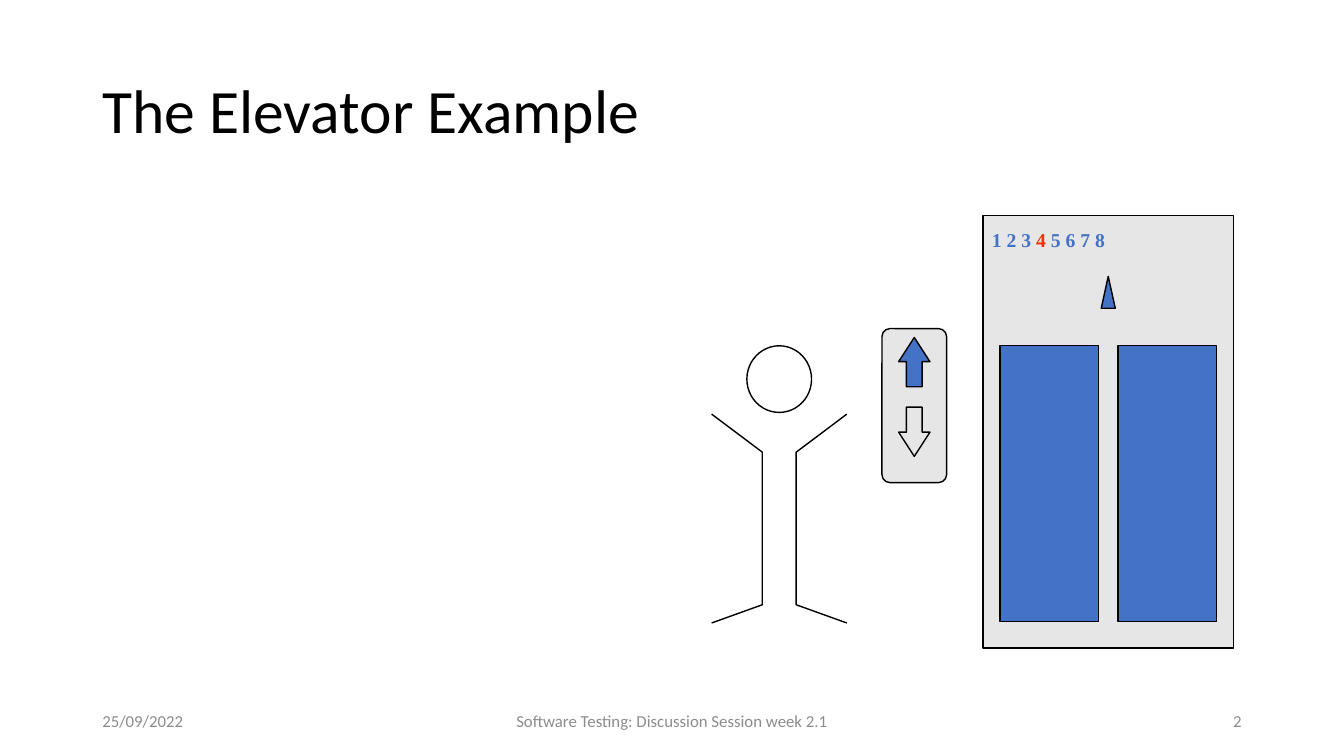
from pptx import Presentation
from pptx.dml.color import RGBColor
from pptx.enum.shapes import MSO_SHAPE
from pptx.enum.text import MSO_ANCHOR, MSO_AUTO_SIZE, PP_ALIGN
from pptx.util import Pt

RECTANGLE = MSO_SHAPE.RECTANGLE
ROUNDED = MSO_SHAPE.ROUNDED_RECTANGLE
OVAL = MSO_SHAPE.OVAL
TRIANGLE = MSO_SHAPE.ISOSCELES_TRIANGLE
UP_ARROW, DOWN_ARROW = MSO_SHAPE.UP_ARROW, MSO_SHAPE.DOWN_ARROW
TOP, MIDDLE = MSO_ANCHOR.TOP, MSO_ANCHOR.MIDDLE
LEFT, CENTER, RIGHT = PP_ALIGN.LEFT, PP_ALIGN.CENTER, PP_ALIGN.RIGHT
NO_AUTOFIT = MSO_AUTO_SIZE.NONE

TITLE_ONLY = 5
BLACK, GREY, PANEL, BLUE, RED = "000000", "8C8C8C", "E7E6E6", "4472C4", "F23002"
TITLE_FORMAT = {"name": "Calibri", "size": Pt(44), "bold": False}
FOOTER_FORMAT = {"name": "Calibri", "size": Pt(12), "bold": False}
FLOOR_FORMAT = {"name": "Times New Roman", "size": Pt(14), "bold": True}


def colour(value):
    return RGBColor.from_string(value)


def write(shape, spans, text_format, align=LEFT, anchor=MIDDLE):
    frame = shape.text_frame
    frame.word_wrap = True
    frame.auto_size = NO_AUTOFIT
    frame.vertical_anchor = anchor
    para = frame.paragraphs[0]
    para.alignment = align
    for text, ink in spans:
        span = para.add_run()
        span.text = text
        span.font.color.rgb = colour(ink)
        for name, value in text_format.items():
            setattr(span.font, name, value)
    return para


def add_text(page, box, *details):
    write(page.shapes.add_textbox(*map(Pt, box)), *details)


def outline(shape, fill=None):
    shape.shadow.inherit = False
    if fill:
        shape.fill.solid()
        shape.fill.fore_color.rgb = colour(fill)
    else:
        shape.fill.background()
    shape.line.color.rgb = colour(BLACK)
    shape.line.width = Pt(1)


def add_outlined(page, kind, box, fill=None, adjustments=()):
    shape = page.shapes.add_shape(kind, *map(Pt, box))
    outline(shape, fill)
    for index, value in enumerate(adjustments):
        shape.adjustments[index] = value


def add_title(page, box):
    title = page.shapes.title
    title.left, title.top, title.width, title.height = map(Pt, box)
    para = write(title, [("The Elevator Example", BLACK)], TITLE_FORMAT)
    para.line_spacing = 0.9


def add_footer(page, box):
    left, top, width, height = box
    side, middle = 216, 324
    parts = [
        (left, side, "25/09/2022", LEFT),
        (left + (width - middle) / 2, middle,
         "Software Testing: Discussion Session week 2.1", CENTER),
        (left + width - side, side, "2", RIGHT),
    ]
    for x, part_width, text, align in parts:
        add_text(page, (x, top, part_width, height), [(text, GREY)],
                 FOOTER_FORMAT, align)


def add_passenger(page, box):
    left, top, width, height = box
    centre = left + width / 2
    head_width, head_height, torso = 46.2, 47.6, 12.1
    add_outlined(page, OVAL, (centre - head_width / 2, top, head_width, head_height))
    for side in (-1, 1):
        outer, inner = centre + side * width / 2, centre + side * torso
        limbs = [(outer, top + 48.8), (inner, top + 76),
                 (inner, top + 185), (outer, top + height)]
        points = [(Pt(x), Pt(y)) for x, y in limbs]
        builder = page.shapes.build_freeform(*points[0])
        builder.add_line_segments(points[1:], close=False)
        outline(builder.convert_to_shape())


def add_call_panel(page, box):
    left, top, width, height = box
    add_outlined(page, ROUNDED, box, PANEL, [0.125])
    arrow_width, arrow_height, pitch = 22.4, 35.2, 49.7
    arrow_left = left + (width - arrow_width) / 2
    for row, (kind, fill) in enumerate([(UP_ARROW, BLUE), (DOWN_ARROW, None)]):
        arrow = (arrow_left, top + 6.4 + row * pitch, arrow_width, arrow_height)
        add_outlined(page, kind, arrow, fill, [0.5, 0.773])


def add_elevator(page, box):
    left, top, width, height = box
    add_outlined(page, RECTANGLE, box, PANEL)
    door_width, margin = 70.4, 12
    for x in (left + margin, left + width - margin - door_width):
        add_outlined(page, RECTANGLE, (x, top + 93, door_width, 197), BLUE)
    floors = [("1 2 3 ", BLUE), ("4", RED), (" 5 6 7 8", BLUE)]
    add_text(page, (left - 0.7, top + 5, 192, 50), floors, FLOOR_FORMAT, LEFT, TOP)
    add_outlined(page, TRIANGLE, (left + width / 2 - 5, top + 43.4, 10, 22.8), BLUE)


def main():
    deck = Presentation()
    deck.slide_width, deck.slide_height = Pt(960), Pt(540)
    page = deck.slides.add_slide(deck.slide_layouts[TITLE_ONLY])
    add_title(page, (66, 28.75, 828, 104.4))
    add_footer(page, (66, 500.5, 828, 28.75))
    add_passenger(page, (508.3, 247, 96.6, 198))
    add_call_panel(page, (630, 234.7, 46.2, 110))
    add_elevator(page, (702.2, 154, 178.8, 309))
    deck.save("out.pptx")


if __name__ == "__main__":
    main()
